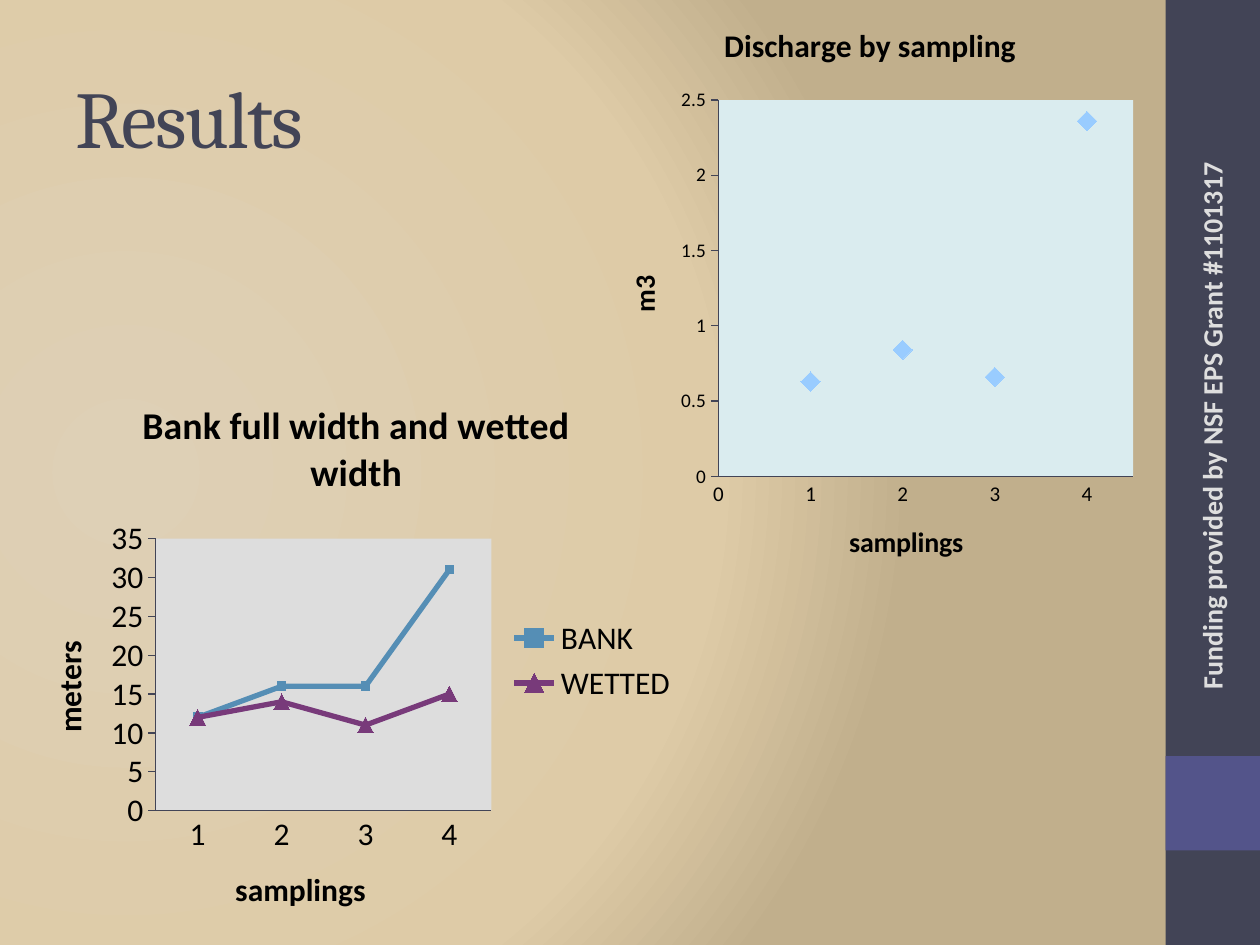
from lxml import etree
from pptx import Presentation
from pptx.chart.data import CategoryChartData, XyChartData
from pptx.dml.color import RGBColor
from pptx.enum.chart import XL_CHART_TYPE as CT, XL_LEGEND_POSITION as LP
from pptx.enum.chart import XL_MARKER_STYLE as MS, XL_TICK_MARK as TM
from pptx.enum.shapes import MSO_SHAPE
from pptx.enum.text import MSO_ANCHOR, PP_ALIGN
from pptx.oxml import parse_xml
from pptx.oxml.ns import nsdecls, qn
from pptx.util import Inches, Pt

rgb = RGBColor.from_string


def place(el, index, x, y, w=None, h=None):
    """Give a chart part a manual layout, in fractions of the chart."""
    for old in el.findall(qn("c:layout")):
        el.remove(old)
    layout = etree.Element(qn("c:layout"))
    manual = etree.SubElement(layout, qn("c:manualLayout"))
    values = [("xMode", "edge"), ("yMode", "edge"), ("x", x), ("y", y)]
    if w is not None:
        values += [("w", w), ("h", h)]
    if el.tag == qn("c:plotArea"):
        values.insert(0, ("layoutTarget", "inner"))
    for name, value in values:
        etree.SubElement(manual, qn("c:" + name)).set("val", str(value))
    el.insert(index, layout)


def add_title(title, text, size, x, y):
    p = title.text_frame.paragraphs[0]
    r = p.add_run()
    r.text = text
    for name, value in dict(size=Pt(size), bold=True, name="Calibri").items():
        setattr(r.font, name, value)
    r.font.color.rgb = rgb("000000")
    place(title._element, 1, x, y)


prs = Presentation()
prs.slide_width, prs.slide_height = Inches(10), Inches(7.5)
s = prs.slides.add_slide(prs.slide_layouts[5])

# Background: circular gradient centred near the left edge
stops = "".join(
    f'<a:gs pos="{pos * 1000}"><a:srgbClr val="{color}"/></a:gs>'
    for pos, color in [(0, "DED0B6"), (75, "DECBA7"), (100, "C1AF8C")])
s.element.cSld.insert(0, parse_xml(
    f'<p:bg {nsdecls("p", "a")}><p:bgPr><a:gradFill rotWithShape="1">'
    f'<a:gsLst>{stops}</a:gsLst><a:path path="circle">'
    '<a:fillToRect l="20000" t="50000" r="100000" b="50000"/></a:path>'
    '</a:gradFill><a:effectLst/></p:bgPr></p:bg>'))

# Side band
for top, height, color in [(0, 7.5, "424456"), (6, 0.75, "53548A")]:
    sp = s.shapes.add_shape(MSO_SHAPE.RECTANGLE, Inches(9.25), Inches(top),
                            Inches(0.75), Inches(height))
    sp.shadow.inherit = False
    sp.fill.solid()
    sp.fill.fore_color.rgb = rgb(color)
    sp.line.fill.background()

# Slide title and rotated funding note
title = s.shapes.title
title.left, title.top = Inches(0.5), Inches(0.3)
title.width, title.height = Inches(8.33), Inches(1.25)
funding = s.shapes.add_textbox(Inches(7.07), Inches(3.16), Inches(5.09), Inches(0.44))
funding.rotation = 270
for sp, text, align, color, font in [
    (title, "Results", PP_ALIGN.LEFT, "424456",
     dict(name="Cambria", size=Pt(46))),
    (funding, "Funding provided by NSF EPS Grant #1101317", PP_ALIGN.CENTER, "DEDEDE",
     dict(name="Calibri", size=Pt(16), bold=True)),
]:
    tf = sp.text_frame
    tf.word_wrap = True
    tf.vertical_anchor = MSO_ANCHOR.MIDDLE
    p = tf.paragraphs[0]
    p.alignment = align
    r = p.add_run()
    r.text = text
    r.font.color.rgb = rgb(color)
    for name, value in font.items():
        setattr(r.font, name, value)
title.text_frame.paragraphs[0].runs[0].font._element.set("spc", "-100")

# Chart data
discharge_data = XyChartData()
discharge = discharge_data.add_series("Series 1")
for x, y in enumerate([0.63, 0.84, 0.66, 2.36], 1):
    discharge.add_data_point(x, y)

width_data = CategoryChartData()
width_data.categories = ["1", "2", "3", "4"]
width_data.add_series("BANK", [12, 16, 16, 31])
width_data.add_series("WETTED", [12, 14, 11, 15])

# One entry per chart; titles are (text, size, x, y)
charts = [
    dict(type=CT.XY_SCATTER, data=discharge_data, at=(4.75, 0, 4.33, 4.67),
         title=("Discharge by sampling", 18, 0.22, 0.03),
         x_title=("samplings", 16, 0.45, 0.88), y_title=("m3", 16, 0.04, 0.46),
         sizes=(12, 11), scale=(2.5, 0.5), plot=(0.22, 0.17, 0.76, 0.64),
         plot_fill="DAECEF", series=[("99CCFF", MS.DIAMOND, 11)]),
    dict(type=CT.LINE_MARKERS, data=width_data, at=(0.17, 2.97, 5.33, 4.5),
         title=("Bank full width and wetted width", 21.6, 0.17, 0.03),
         x_title=("samplings", 18, 0.31, 0.86), y_title=("meters", 18, 0.03, 0.46),
         sizes=(18, 18), scale=(35, 5), plot=(0.2, 0.29, 0.5, 0.48),
         plot_fill="DDDDDD",
         series=[("558EB5", MS.SQUARE, 5), ("783A7A", MS.TRIANGLE, 9)]),
]
for c in charts:
    chart = s.shapes.add_chart(c["type"], *map(Inches, c["at"]), c["data"]).chart
    chart.font.name, chart.font.size = "Calibri", Pt(c["sizes"][0])
    chart.font.color.rgb = rgb("000000")
    chart.has_title = True
    add_title(chart.chart_title, *c["title"])

    x_axis, y_axis = chart.category_axis, chart.value_axis
    for axis, key, size, tick in [(x_axis, "x_title", c["sizes"][0], TM.NONE),
                                  (y_axis, "y_title", c["sizes"][1], TM.OUTSIDE)]:
        axis.has_major_gridlines = False
        axis.major_tick_mark, axis.minor_tick_mark = tick, TM.NONE
        axis.format.line.color.rgb = rgb("424456")
        axis.format.line.width = Pt(0.75)
        axis.tick_labels.font.size = Pt(size)
        add_title(axis.axis_title, *c[key])
    y_axis.minimum_scale = 0
    y_axis.maximum_scale, y_axis.major_unit = c["scale"]

    is_scatter = c["type"] == CT.XY_SCATTER
    if is_scatter:
        x_axis.minimum_scale, x_axis.maximum_scale, x_axis.major_unit = 0, 4.5, 1
    chart.has_legend = not is_scatter
    if chart.has_legend:
        chart.legend.position = LP.RIGHT
        chart.legend.include_in_layout = False
        chart.legend.font.size = Pt(18)
        place(chart.legend._element, 1, 0.72, 0.42, 0.26, 0.17)

    chart.plots[0].vary_by_categories = False
    for series, (color, style, size) in zip(chart.plots[0].series, c["series"]):
        if is_scatter:
            series.format.line.fill.background()
        else:
            series.smooth = False
            series.format.line.color.rgb = rgb(color)
            series.format.line.width = Pt(3)
        series.marker.style, series.marker.size = style, size
        series.marker.format.fill.solid()
        series.marker.format.fill.fore_color.rgb = rgb(color)
        series.marker.format.line.fill.background()

    plot_area = chart._chartSpace.chart.plotArea
    place(plot_area, 0, *c["plot"])
    plot_area.append(parse_xml(
        f'<c:spPr {nsdecls("c", "a")}><a:solidFill><a:srgbClr val="{c["plot_fill"]}"/>'
        '</a:solidFill></c:spPr>'))

prs.save("out.pptx")
